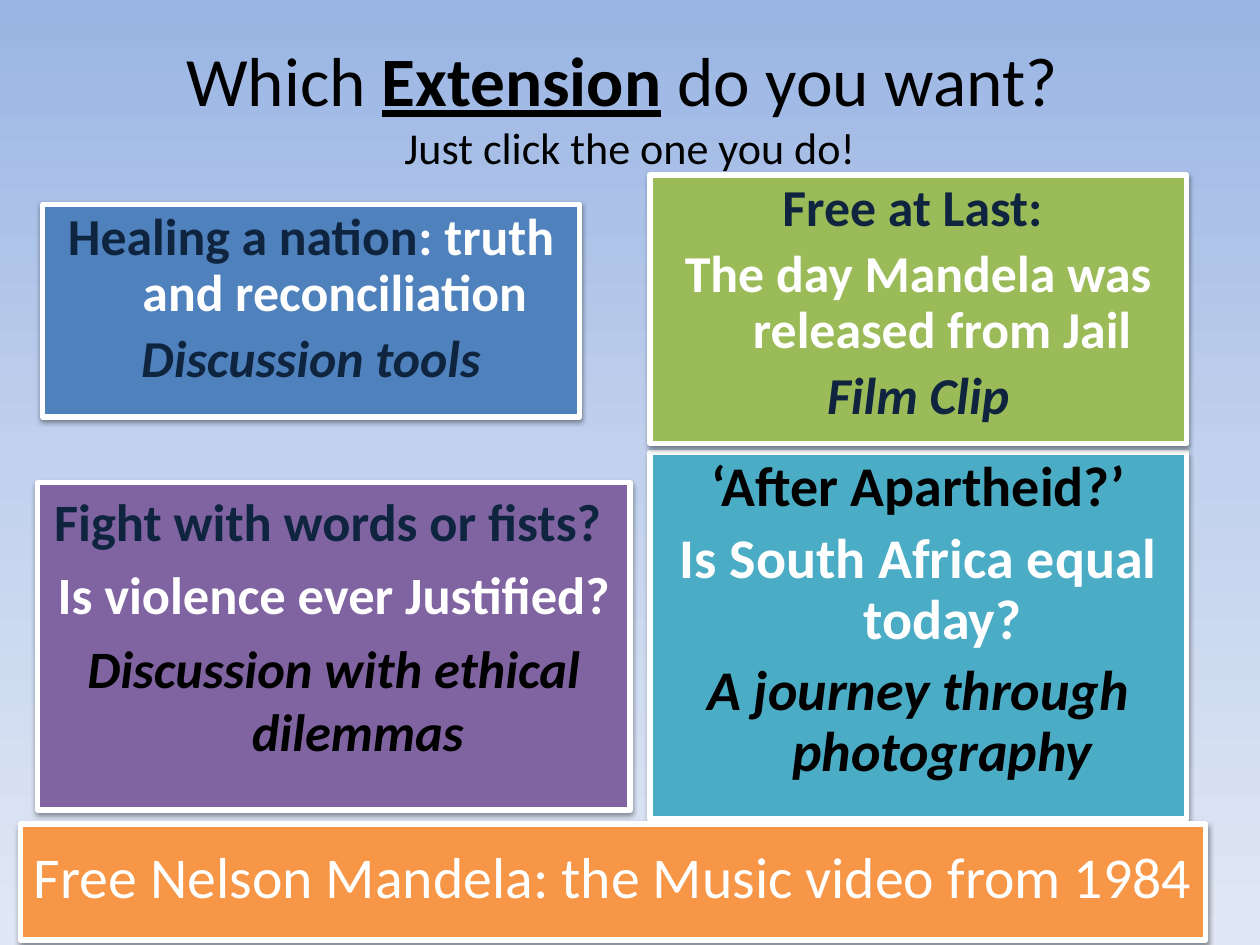
from lxml import etree
from pptx import Presentation
from pptx.dml.color import RGBColor
from pptx.enum.shapes import MSO_SHAPE
from pptx.enum.text import MSO_ANCHOR, PP_ALIGN
from pptx.oxml import parse_xml
from pptx.oxml.ns import nsdecls, qn
from pptx.util import Inches, Pt

RECT = MSO_SHAPE.RECTANGLE
TOP, MIDDLE = MSO_ANCHOR.TOP, MSO_ANCHOR.MIDDLE
CENTER = PP_ALIGN.CENTER
WIDTH, HEIGHT = Inches(10), Inches(7.5)
COLUMNS, ROWS = 100, 75
FONT = "Calibri"
BLACK, WHITE, NAVY = "000000", "FFFFFF", "0F243E"
SKY = [(0, "9AB5E4"), (50, "C2D1ED"), (100, "E1E8F5")]
LEFT, RIGHT = 3.4, 51.6
CARD_WIDTH = 42.6
HANGING = Inches(0.38)

CARDS = [
    ((RIGHT, 35.9, CARD_WIDTH, 29.1), "4BACC6", 32, 0.9, [
        [("‘After Apartheid?’", BLACK, False)],
        [("Is South Africa equal today?", WHITE, False)],
        [("A journey through photography", BLACK, True)]]),
    ((3, 38.3, 47, 26), "8064A2", 30, 1.0, [
        [("Fight with words or fists? ", NAVY, False)],
        [("Is violence ever Justified?", WHITE, False)],
        [("Discussion with ethical dilemmas", BLACK, True)]]),
    ((RIGHT, 13.9, CARD_WIDTH, 21.3), "9BBB59", 29.6, 0.9, [
        [("Free at Last: ", NAVY, False)],
        [("The day Mandela was released from Jail", WHITE, False)],
        [("Film Clip", NAVY, True)]]),
    ((LEFT, 16.2, CARD_WIDTH, 16.9), "4F81BD", 29.6, 0.9, [
        [("Healing a nation", NAVY, False),
         (": truth and reconciliation", WHITE, False)],
        [("Discussion tools", NAVY, True)]]),
]


def rgb(value):
    """Turn a hex string into a colour."""
    return RGBColor.from_string(value)


def grid(left, top, width, height):
    """Turn grid columns and rows into slide lengths."""
    across, down = WIDTH / COLUMNS, HEIGHT / ROWS
    return (round(left * across), round(top * down),
            round(width * across), round(height * down))


def paint_background(s, stops):
    """Fill the slide with a gradient from top to bottom."""
    fill = s.background.fill
    fill.gradient()
    grad = s.background._cSld.find(".//" + qn("a:gradFill"))
    for child in list(grad):
        grad.remove(child)
    gs = "".join(f'<a:gs pos="{pos * 1000}"><a:srgbClr val="{color}"/></a:gs>'
                 for pos, color in stops)
    grad.append(parse_xml(f'<a:gsLst {nsdecls("a")}>{gs}</a:gsLst>'))
    etree.SubElement(grad, qn("a:lin"), ang="5400000", scaled="0")


def add_shadow(sp):
    """Give a shape a soft shadow below it."""
    sp.shadow.inherit = False
    effects = sp._element.spPr.find(qn("a:effectLst"))
    shadow = etree.SubElement(
        effects, qn("a:outerShdw"), blurRad=str(Pt(3.1)), dist=str(Pt(1.6)),
        dir="5400000", rotWithShape="0")
    color = etree.SubElement(shadow, qn("a:srgbClr"), val=BLACK)
    etree.SubElement(color, qn("a:alpha"), val="38000")


def add_run(p, text, size, color, bold=False, italic=False, underline=False):
    """Add a formatted run to a paragraph."""
    r = p.add_run()
    r.text = text
    font = r.font
    font.name, font.size, font.color.rgb = FONT, Pt(size), rgb(color)
    font.bold, font.italic, font.underline = bold, italic, underline


def add_panel(s, cells, color, anchor):
    """Add a white-framed rectangle and return its text frame."""
    sp = s.shapes.add_shape(RECT, *grid(*cells))
    sp.fill.solid()
    sp.fill.fore_color.rgb = rgb(color)
    sp.line.color.rgb = rgb(WHITE)
    sp.line.width = Pt(3)
    add_shadow(sp)
    tf = sp.text_frame
    tf.word_wrap = True
    tf.vertical_anchor = anchor
    return tf


def add_card(s, cells, color, size, spacing, paragraphs):
    """Add an extension choice with hanging, centred paragraphs."""
    tf = add_panel(s, cells, color, TOP)
    for i, runs in enumerate(paragraphs):
        p = tf.add_paragraph() if i else tf.paragraphs[0]
        p.alignment = CENTER
        p.line_spacing = spacing
        p.space_before = Pt(round(0.2 * size, 1) if i else 0)
        pPr = p._p.get_or_add_pPr()
        pPr.set("marL", str(HANGING))
        pPr.set("indent", str(-HANGING))
        for text, ink, italic in runs:
            add_run(p, text, size, ink, bold=True, italic=italic)


def add_title(s):
    """Add the question and the instruction below it."""
    tf = s.shapes.add_textbox(*grid(0, 2.1, COLUMNS, 12.5)).text_frame
    tf.word_wrap = True
    tf.vertical_anchor = MIDDLE
    p = tf.paragraphs[0]
    p.alignment = CENTER
    add_run(p, "Which ", 39.6, BLACK)
    add_run(p, "Extension", 39.6, BLACK, bold=True, underline=True)
    add_run(p, " do you want? ", 39.6, BLACK)
    p.add_line_break()
    add_run(p, "Just click the one you do!", 25.2, BLACK)


def add_banner(s):
    """Add the music video choice along the bottom."""
    tf = add_panel(s, (1.6, 65.4, 94.1, 9.2), "F79646", MIDDLE)
    p = tf.paragraphs[0]
    p.alignment = CENTER
    p.line_spacing = 0.8
    add_run(p, "Free Nelson Mandela: the Music video from 1984", 33, WHITE)


def main():
    """Build and save the slide."""
    prs = Presentation()
    prs.slide_width, prs.slide_height = WIDTH, HEIGHT
    s = prs.slides.add_slide(prs.slide_layouts[6])
    paint_background(s, SKY)
    add_title(s)
    for card in CARDS:
        add_card(s, *card)
    add_banner(s)
    prs.save("out.pptx")


if __name__ == "__main__":
    main()
